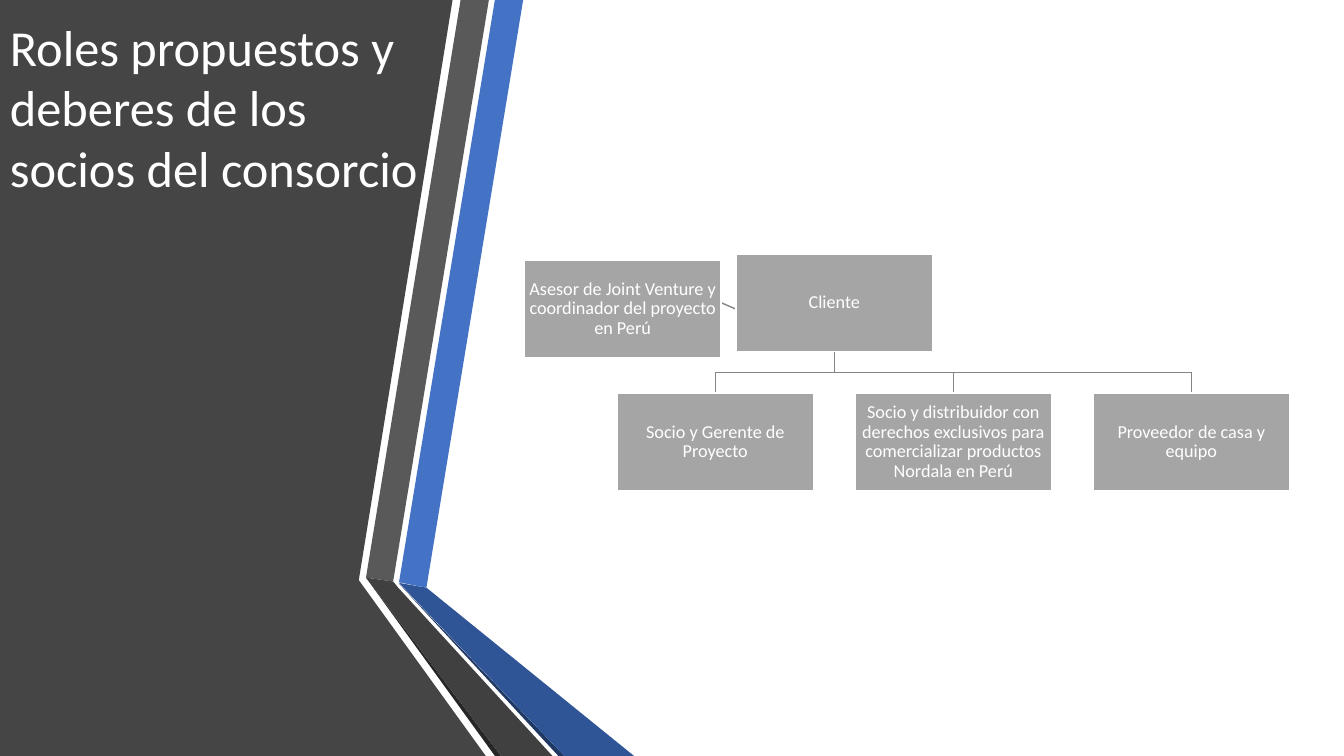
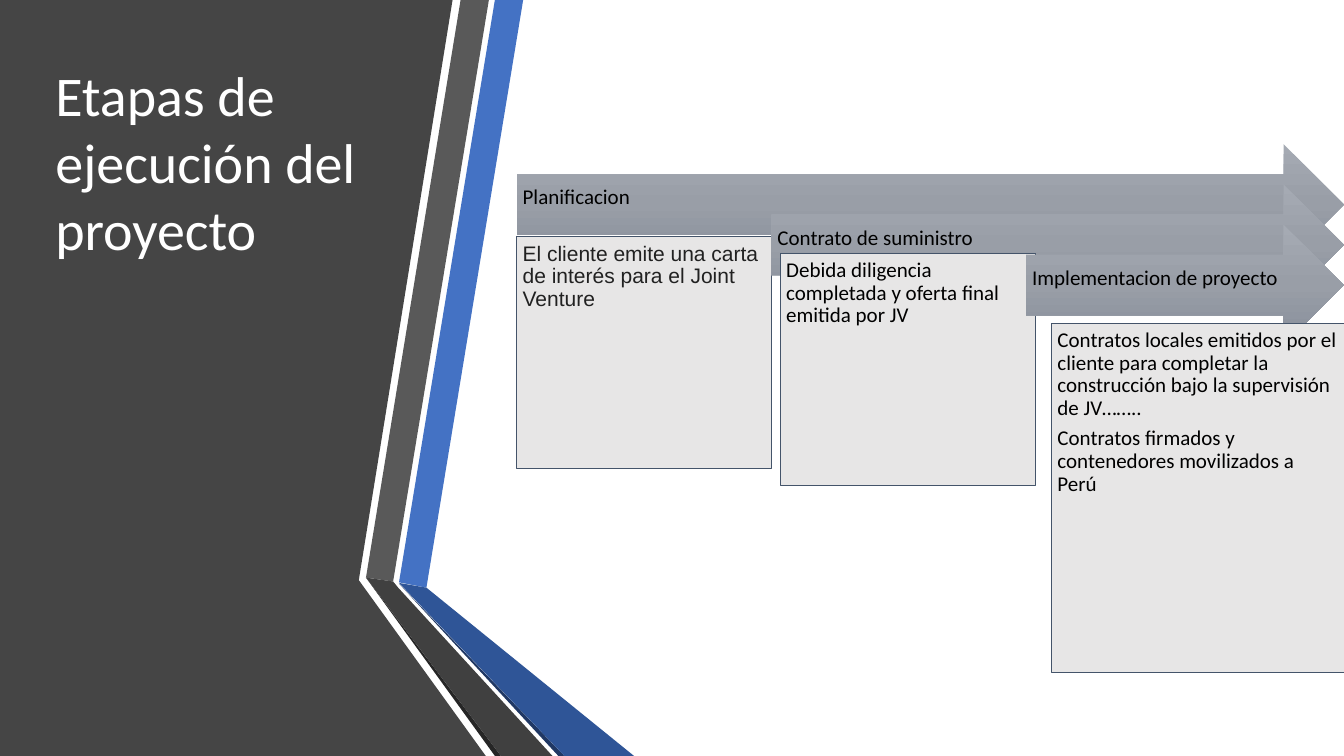
from copy import deepcopy

from pptx import Presentation
from pptx.dml import color
from pptx.enum import shapes, text
from pptx.oxml import ns
from pptx.util import Pt

WIDTH, HEIGHT = 960, 540
WHITE, BLACK = "FFFFFF", "000000"
ORG_FILL, ORG_LINE = "A5A5A5", "848484"
PANEL_FILL, PANEL_LINE = "E7E6E6", "44546A"
ARROW_STOPS = [(0, "A5AAB3"), (0.5, "999EA7"), (1, "878E9A")]
BANDS = [
    ("454545", [(0, 0), (323.3, 0), (256.3, 414.4), (347, HEIGHT), (0, HEIGHT)]),
    ("4472C4", [(285, 416), (304.6, 419.8), (373.7, 0), (353.5, 0)]),
    ("595959", [(349.2, 0), (329, 0), (261.4, 412.6), (280.8, 415.4)]),
    ("262626", [(261.4, 412.6), (353.5, HEIGHT), (357.8, HEIGHT)]),
    ("203864", [(285, 416.9), (398.9, HEIGHT), (403.2, HEIGHT)]),
    ("2F5597", [(285, 416.4), (403.2, HEIGHT), (452.9, HEIGHT), (304.6, 419.8)]),
    ("404040", [(394.6, HEIGHT), (284.4, 419.8), (280.8, 415.4), (261.4, 412.6), (357.8, HEIGHT)]),
]


def rgb(value):
    """Turn a hex string into a colour."""
    return color.RGBColor.from_string(value)


def paint(shape, fill=None, line=None, weight=1):
    """Set the fill and outline of a shape and remove its shadow."""
    shape.shadow.inherit = False
    if fill:
        shape.fill.solid()
        shape.fill.fore_color.rgb = rgb(fill)
    if line:
        shape.line.color.rgb = rgb(line)
        shape.line.width = Pt(weight)
    else:
        shape.line.fill.background()


def write(shape, lines, size, ink, font="Calibri", align=text.PP_ALIGN.LEFT,
          anchor=text.MSO_ANCHOR.TOP, insets=(7.2, 3.6, 7.2, 3.6), spacing=None, after=0):
    """Fill a shape with wrapped paragraphs in one style."""
    frame = shape.text_frame
    frame.word_wrap = True
    frame.vertical_anchor = anchor
    frame.margin_left, frame.margin_top, frame.margin_right, frame.margin_bottom = map(Pt, insets)
    frame.text = "\n".join(lines)
    for para in frame.paragraphs:
        para.alignment = align
        para.line_spacing = spacing
        para.space_after = Pt(after)
        para.font.name = font
        para.font.size = Pt(size)
        para.font.color.rgb = rgb(ink)


def add_block(page, kind, box):
    """Add a preset shape in a box given in points."""
    return page.shapes.add_shape(kind, *map(Pt, box))


def add_page(deck, title, box, size):
    """Add a slide with the folded side bands and its title."""
    page = deck.slides.add_slide(deck.slide_layouts[6])
    for fill, corners in BANDS:
        outline = [(Pt(x), Pt(y)) for x, y in corners]
        builder = page.shapes.build_freeform(*outline[0], scale=1.0)
        builder.add_line_segments(outline[1:], close=True)
        paint(builder.convert_to_shape(), fill)
    write(page.shapes.add_textbox(*map(Pt, box)), [title], size, WHITE)
    return page


def add_line(page, start, end):
    """Add a thin grey straight connector."""
    line = page.shapes.add_connector(shapes.MSO_CONNECTOR.STRAIGHT, *map(Pt, start + end))
    line.line.color.rgb = rgb(ORG_LINE)
    line.line.width = Pt(1)
    line._element.spPr.append(line._element.makeelement(ns.qn("a:effectLst"), {}))
    return line


def add_role(page, left, top, width, height, label):
    """Add one grey role box."""
    role = add_block(page, shapes.MSO_SHAPE.RECTANGLE, (left, top, width, height))
    paint(role, ORG_FILL, WHITE)
    write(role, [label], 13, WHITE, align=text.PP_ALIGN.CENTER, anchor=text.MSO_ANCHOR.MIDDLE,
          insets=(0.7,) * 4, spacing=0.9, after=4.5)
    return role


def add_organisation(page, left, top, client, adviser, partners):
    """Add the client, its adviser and the row of partners below."""
    width, height, step = 140.4, 69.8, 170
    client_left, adviser_top = left + 151.2, top + 4.4
    row_left, row_top, bus = left + 66.2, top + 99.4, top + 84.5
    middle, bottom = client_left + width / 2, top + height
    centres = [row_left + width / 2 + step * index for index in range(len(partners))]

    link = add_line(page, (middle, bottom), (left + width / 2, adviser_top))
    trunk = add_line(page, (middle, bottom), (middle, bus))
    add_line(page, (centres[0], bus), (centres[-1], bus))
    drops = [add_line(page, (centre, bus), (centre, row_top)) for centre in centres]

    client_box = add_role(page, client_left, top, width, height, client)
    adviser_box = add_role(page, left, adviser_top, width, height, adviser)
    link.begin_connect(client_box, 2)
    link.end_connect(adviser_box, 0)
    trunk.begin_connect(client_box, 2)
    for drop, centre, label in zip(drops, centres, partners):
        drop.end_connect(add_role(page, centre - width / 2, row_top, width, height, label), 0)


def shade(shape):
    """Give a shape the three-stop vertical gradient."""
    shape.fill.gradient()
    shape.fill.gradient_angle = 270
    first = shape._element.spPr.find(".//" + ns.qn("a:gs"))
    first.addnext(deepcopy(first))
    for stop, (position, value) in zip(shape.fill.gradient_stops, ARROW_STOPS):
        stop.position = position
        stop.color.rgb = rgb(value)


def add_stages(page, left, top, stages):
    """Add overlapping arrows that all reach the right edge, each with a panel."""
    for index, (name, panel_box, lines, font, ink) in enumerate(stages):
        start = left + 182 * index
        arrow = add_block(page, shapes.MSO_SHAPE.RIGHT_ARROW,
                          (start, top + 28.7 * index, WIDTH - start, 86.4))
        paint(arrow)
        shade(arrow)
        write(arrow, [name], 15, BLACK, anchor=text.MSO_ANCHOR.MIDDLE,
              insets=(4.3, 4.3, 20, 13.7), spacing=0.9, after=5.25)
        across, down, width, height = panel_box
        panel = add_block(page, shapes.MSO_SHAPE.RECTANGLE, (left + across, top + down, width, height))
        paint(panel, PANEL_FILL, PANEL_LINE, 0.5)
        write(panel, lines, 15, ink, font, insets=(4.3,) * 4, spacing=0.9, after=5.25)


def main():
    """Build and save the deck."""
    deck = Presentation()
    deck.slide_width, deck.slide_height = Pt(WIDTH), Pt(HEIGHT)

    roles = add_page(deck, "Roles propuestos y deberes de los socios del consorcio",
                     (0, 8, 313, 138), 36)
    add_organisation(roles, 374.5, 181.4, "Cliente",
                     "Asesor de Joint Venture y coordinador del proyecto en Perú",
                     ["Socio y Gerente de Proyecto",
                      "Socio y distribuidor con derechos exclusivos para comercializar productos Nordala en Perú",
                      "Proveedor de casa y equipo"])

    schedule = add_page(deck, "Etapas de ejecución del proyecto", (32.4, 39.6, 306, 153), 40)
    add_stages(schedule, 369, 103, [
        ("Planificacion", (0, 66.2, 182, 165.6),
         ["El cliente emite una carta de interés para el Joint Venture"], "Arial", "212121"),
        ("Contrato de suministro", (188.3, 77.9, 182, 165.6),
         ["Debida diligencia completada y oferta final emitida por JV"], "Calibri", BLACK),
        ("Implementacion de proyecto", (382, 128, 209, 249),
         ["Contratos locales emitidos por el cliente para completar la construcción bajo la supervisión de JV……..",
          "Contratos firmados y contenedores movilizados a Perú"], "Calibri", BLACK),
    ])
    deck.save("out.pptx")


if __name__ == "__main__":
    main()
